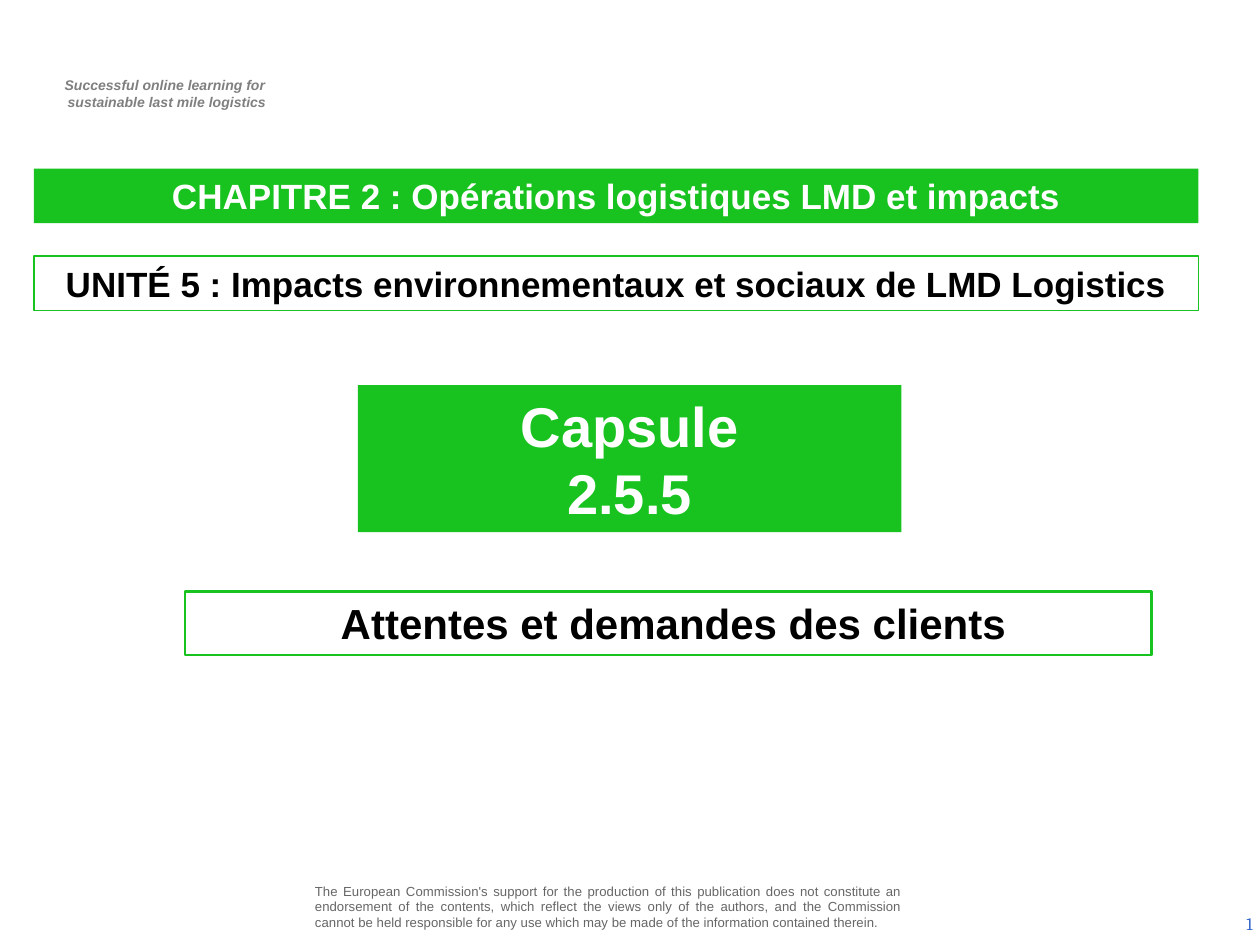
"""Build the opening slide of capsule 2.5.5."""
from dataclasses import dataclass, field
from typing import Optional

from pptx import Presentation
from pptx.dml.color import RGBColor
from pptx.enum import shapes, text
from pptx.util import Pt

GREEN = RGBColor(0x18, 0xC3, 0x20)
WHITE = RGBColor(0xFF, 0xFF, 0xFF)
BLACK = RGBColor(0x00, 0x00, 0x00)
GREY = RGBColor(0x7F, 0x7F, 0x7F)
DARK = RGBColor(0x66, 0x66, 0x66)
BLUE = RGBColor(0x33, 0x66, 0xCC)

ALIGN = text.PP_ALIGN
TOP, MID = text.MSO_ANCHOR.TOP, text.MSO_ANCHOR.MIDDLE


@dataclass
class Box:
    """A block of text with its place and look."""
    lines: list[str]
    area: tuple[float, float, float, float]
    size: float
    color: RGBColor
    fill: Optional[RGBColor] = None
    edge: float = 0
    align: ALIGN = ALIGN.CENTER
    anchor: text.MSO_ANCHOR = TOP
    pad: tuple[float, float] = (7.2, 3.6)
    indent: float = 0
    look: dict = field(default_factory=lambda: {"name": "Arial", "bold": True})


def place(shape, box: Box) -> None:
    """Move a shape to the area of its box."""
    for key, val in zip(("left", "top", "width", "height"), box.area):
        setattr(shape, key, Pt(val))


def write(shape, box: Box) -> None:
    """Set the text of a shape and its format."""
    frame = shape.text_frame
    side, end = map(Pt, box.pad)
    form = {"word_wrap": True, "auto_size": text.MSO_AUTO_SIZE.NONE,
            "vertical_anchor": box.anchor, "margin_left": side,
            "margin_right": side, "margin_top": end, "margin_bottom": end}
    for key, val in form.items():
        setattr(frame, key, val)
    frame.text = "\n".join(box.lines)
    for para in frame.paragraphs:
        para.alignment = box.align
        para.space_before = Pt(0)
        if box.indent:
            para._p.get_or_add_pPr().set("marL", str(Pt(box.indent)))
        for run in para.runs:
            for key, val in {**box.look, "size": Pt(box.size)}.items():
                setattr(run.font, key, val)
            run.font.color.rgb = box.color


def paint(shape, box: Box) -> None:
    """Set the fill and the line of a shape."""
    if box.fill is None:
        shape.fill.background()
    else:
        shape.fill.solid()
        shape.fill.fore_color.rgb = box.fill
    if box.edge:
        shape.line.color.rgb = GREEN
        shape.line.width = Pt(box.edge)
    else:
        shape.line.fill.background()


def draw(shape, box: Box) -> None:
    """Place, paint and fill in one shape."""
    place(shape, box)
    paint(shape, box)
    write(shape, box)


NOTE = ("The European Commission's support for the production of this "
        "publication does not constitute an endorsement of the contents, "
        "which reflect the views only of the authors, and the Commission "
        "cannot be held responsible for any use which may be made of the "
        "information contained therein.")
LABELS = [
    Box(["Successful online learning for ", "sustainable last mile logistics"],
        (20.9, 40.3, 146.2, 26.6), 8, GREY, indent=2.9,
        look={"name": "Arial", "bold": True, "italic": True}),
    Box([NOTE], (177.1, 500.4, 340.6, 35.3), 7.5, DARK, align=ALIGN.JUSTIFY,
        anchor=MID, pad=(2.9, 2.9), look={"name": "Arial"}),
    Box(["1"], (555.1, 513.4, 167.8, 28.8), 10, BLUE, align=ALIGN.RIGHT,
        anchor=MID, look={"name": "Cambria"}),
]
BANDS = [
    Box(["CHAPITRE 2 : Opérations logistiques LMD et impacts"],
        (19.4, 96.3, 665.5, 31.2), 20, WHITE, fill=GREEN),
    Box(["UNITÉ 5 : Impacts environnementaux et sociaux de LMD Logistics"],
        (19.4, 146.3, 665.5, 31.2), 20, BLACK, edge=0.75),
]
TITLE = Box(["Capsule", "2.5.5"], (204.5, 220.1, 310.6, 84), 32, WHITE,
            fill=GREEN)
TOPIC = Box([" Attentes et demandes des clients"],
            (105.8, 338.1, 552.2, 36.3), 24, BLACK, edge=1.5)


def main() -> None:
    """Build and save the slide."""
    deck = Presentation()
    deck.slide_width, deck.slide_height = Pt(720), Pt(540)
    slide = deck.slides.add_slide(deck.slide_layouts[0])
    for shape, box in zip(slide.placeholders, (TITLE, TOPIC)):
        draw(shape, box)
    for box in LABELS:
        draw(slide.shapes.add_textbox(*map(Pt, box.area)), box)
    for box in BANDS:
        band = slide.shapes.add_shape(shapes.MSO_SHAPE.RECTANGLE,
                                      *map(Pt, box.area))
        band.shadow.inherit = False
        draw(band, box)
    deck.save("out.pptx")


if __name__ == "__main__":
    main()
